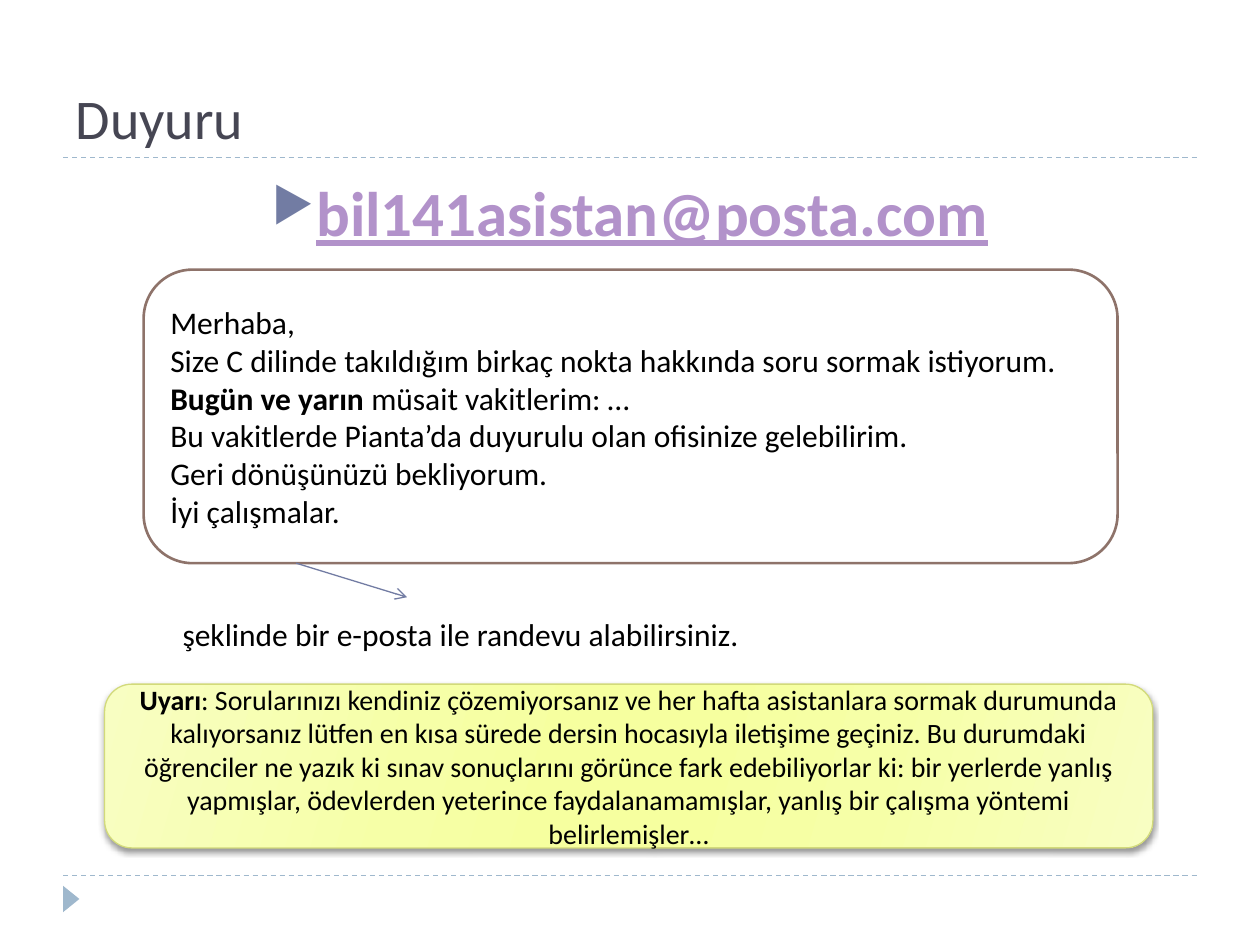
from lxml.etree import SubElement
from pptx import Presentation
from pptx.dml.color import RGBColor
from pptx.enum.dml import MSO_LINE
from pptx.enum.shapes import MSO_CONNECTOR, MSO_SHAPE
from pptx.enum.text import MSO_ANCHOR, PP_ALIGN
from pptx.oxml.ns import qn
from pptx.util import Inches, Pt

COLORS = {
    "title": "464653", "text": "000000", "link": "B292CA", "accent": "727CA3",
    "rule": "9FB8CD", "white": "FFFFFF", "mail_line": "8E736A",
    "warning_line": "D2DA7A", "shadow": "000000",
}
WARNING_STOPS = [(0, "F8FEC2"), (30, "F6FFA7"), (45, "F6FF9F"),
                 (55, "F6FF9F"), (73, "F6FFA7"), (100, "F8FEC2")]
# Each paragraph is a list of (text, bold) spans
MAIL = [
    [("Merhaba,", False)],
    [("Size C dilinde takıldığım birkaç nokta hakkında soru sormak istiyorum.", False)],
    [("Bugün ve yarın ", True), ("müsait vakitlerim: …", False)],
    [("Bu vakitlerde Pianta’da duyurulu olan ofisinize gelebilirim.", False)],
    [("Geri dönüşünüzü bekliyorum.", False)],
    [("İyi çalışmalar.", False)],
]
WARNING = [[
    ("Uyarı", True),
    (": Sorularınızı kendiniz çözemiyorsanız ve her hafta asistanlara sormak "
     "durumunda kalıyorsanız lütfen en kısa sürede dersin hocasıyla iletişime "
     "geçiniz. Bu durumdaki öğrenciler ne yazık ki sınav sonuçlarını görünce fark "
     "edebiliyorlar ki: bir yerlerde yanlış yapmışlar, ödevlerden yeterince "
     "faydalanamamışlar, yanlış bir çalışma yöntemi belirlemişler…", False),
]]


def rgb(name):
    return RGBColor.from_string(COLORS[name])


def add_xml(parent, tag, **values):
    return SubElement(parent, qn(tag), {key: str(value) for key, value in values.items()})


def write(shape, paragraphs, size, color="text", align=PP_ALIGN.LEFT,
          anchor=MSO_ANCHOR.TOP, underline=False):
    frame = shape.text_frame
    frame.word_wrap = True
    frame.vertical_anchor = anchor
    for index, spans in enumerate(paragraphs):
        para = frame.paragraphs[0] if index == 0 else frame.add_paragraph()
        para.alignment = align
        for text, bold in spans:
            span = para.add_run()
            span.text = text
            formats = {"name": "Calibri", "size": Pt(size), "bold": bold,
                       "underline": underline}
            for key, value in formats.items():
                setattr(span.font, key, value)
            span.font.color.rgb = rgb(color)


def add_text(page, place, paragraphs, size, **formats):
    box = page.shapes.add_textbox(*map(Inches, place))
    write(box, paragraphs, size, **formats)
    return box


def add_shape(page, kind, place, fill, line=None, width=0.75):
    shape = page.shapes.add_shape(kind, *map(Inches, place))
    shape.shadow.inherit = False
    shape.fill.solid()
    shape.fill.fore_color.rgb = rgb(fill)
    if line:
        shape.line.color.rgb = rgb(line)
        shape.line.width = Pt(width)
    else:
        shape.line.fill.background()
    return shape


def add_line(page, ends, color, dashed=False, arrow=False):
    line = page.shapes.add_connector(MSO_CONNECTOR.STRAIGHT, *map(Inches, ends))
    line.line.color.rgb = rgb(color)
    line.line.width = Pt(0.75)
    if dashed:
        line.line.dash_style = MSO_LINE.DASH
    if arrow:
        add_xml(line.line._get_or_add_ln(), "a:tailEnd", type="arrow")
    add_xml(line._element.spPr, "a:effectLst")


def add_bullet(para, char, color, percent, indent):
    props = para._p.get_or_add_pPr()
    props.set("marL", str(Inches(indent)))
    props.set("indent", str(-Inches(indent)))
    add_xml(add_xml(props, "a:buClr"), "a:srgbClr", val=COLORS[color])
    add_xml(props, "a:buSzPct", val=percent * 1000)
    add_xml(props, "a:buChar", char=char)


def shade(shape, stops, angle):
    shape.fill.gradient()
    shape.fill.gradient_angle = 360 - angle
    stop_list = shape._element.spPr.find(qn("a:gradFill")).find(qn("a:gsLst"))
    for old in list(stop_list):
        stop_list.remove(old)
    for position, color in stops:
        stop = add_xml(stop_list, "a:gs", pos=position * 1000)
        add_xml(stop, "a:srgbClr", val=color)


def drop_shadow(shape, blur, distance, opacity):
    effects = shape._element.spPr.find(qn("a:effectLst"))
    shadow = add_xml(effects, "a:outerShdw", blurRad=Pt(blur), dist=Pt(distance),
                     dir=90 * 60000, rotWithShape=0)
    color = add_xml(shadow, "a:srgbClr", val=COLORS["shadow"])
    add_xml(color, "a:alpha", val=opacity * 1000)


def main():
    deck = Presentation()
    deck.slide_width, deck.slide_height = Inches(10), Inches(7.5)
    page = deck.slides.add_slide(deck.slide_layouts[5])

    # Rules and corner marker
    for y in (6.95, 1.25):
        add_line(page, (0.5, y, 9.5, y), "rule", dashed=True)
    marker = add_shape(page, MSO_SHAPE.ISOSCELES_TRIANGLE, (0.46, 7.07, 0.21, 0.13), "rule")
    marker.rotation = 90

    # Title
    title = page.shapes.title
    title.left, title.top, title.width, title.height = map(Inches, (0.5, 0.17, 9, 1.08))
    write(title, [[("Duyuru", False)]], 32, color="title", anchor=MSO_ANCHOR.BOTTOM)

    # Contact address
    address = add_text(page, (0.5, 1.33, 9, 5.4), [[("bil141asistan@posta.com", True)]], 36,
                       color="link", align=PP_ALIGN.CENTER, underline=True)
    para = address.text_frame.paragraphs[0]
    para.space_before = Pt(6)
    add_bullet(para, "▶", "accent", 76, 0.3)

    # Sample mail and its caption
    mail = add_shape(page, MSO_SHAPE.ROUNDED_RECTANGLE, (1.14, 2.14, 7.73, 2.33),
                     "white", "mail_line", 1.5)
    write(mail, MAIL, 18, anchor=MSO_ANCHOR.MIDDLE)
    add_line(page, (2.35, 4.47, 3.23, 4.74), "accent", arrow=True)
    add_text(page, (1.35, 4.83, 7.52, 0.4),
             [[("şeklinde bir e-posta ile randevu alabilirsiniz.", False)]], 18)

    # Warning
    warning = add_shape(page, MSO_SHAPE.ROUNDED_RECTANGLE, (0.83, 5.43, 8.32, 1.3),
                        "white", "warning_line")
    shade(warning, WARNING_STOPS, 16)
    drop_shadow(warning, 3, 2, 40)
    write(warning, WARNING, 16, align=PP_ALIGN.CENTER, anchor=MSO_ANCHOR.MIDDLE)

    deck.save("out.pptx")


if __name__ == "__main__":
    main()
